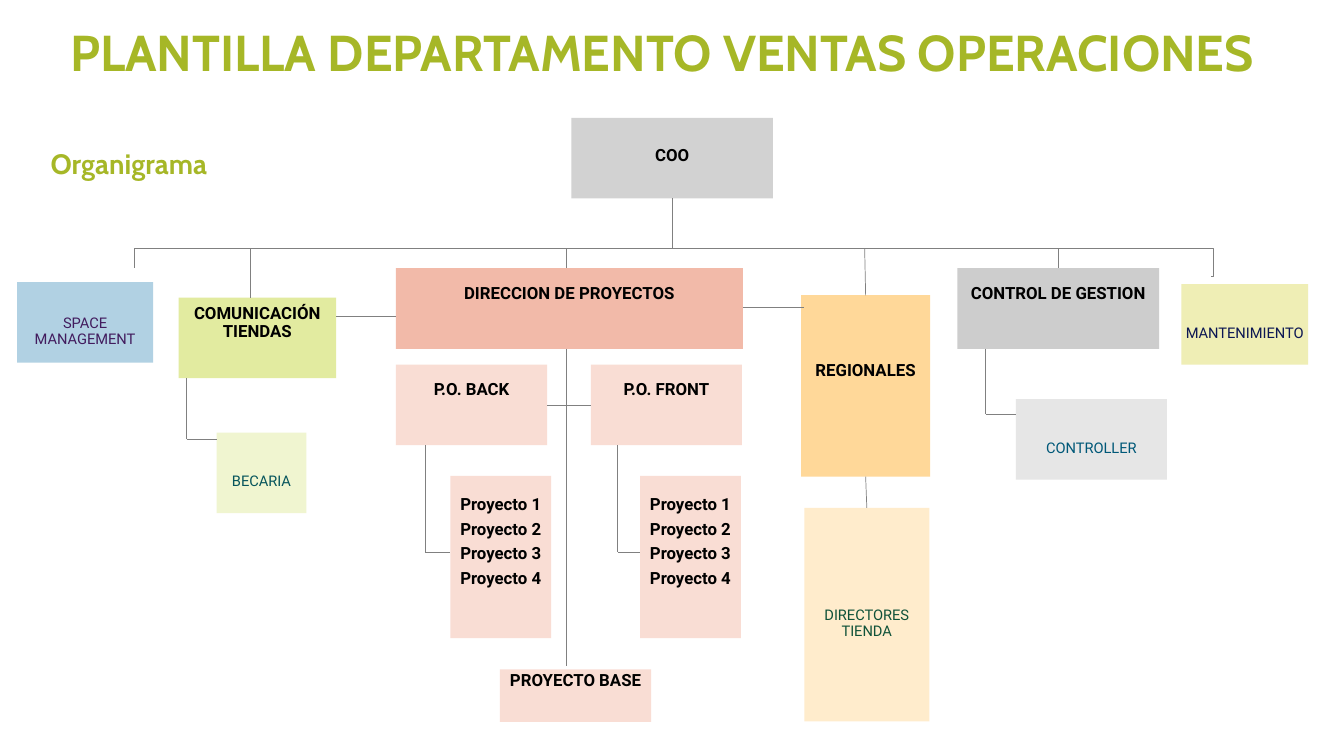
"""Builds the organisation chart slide of the sales operations department."""
from lxml import etree
from pptx import Presentation
from pptx.dml.color import RGBColor
from pptx.enum.shapes import MSO_CONNECTOR, MSO_SHAPE
from pptx.enum.text import MSO_ANCHOR, MSO_AUTO_SIZE, PP_ALIGN
from pptx.oxml.ns import qn
from pptx.util import Cm, Pt

STRAIGHT, ELBOW = MSO_CONNECTOR.STRAIGHT, MSO_CONNECTOR.ELBOW
RECTANGLE = MSO_SHAPE.RECTANGLE
MIDDLE, TOP = MSO_ANCHOR.MIDDLE, MSO_ANCHOR.TOP
CENTER, LEFT = PP_ALIGN.CENTER, PP_ALIGN.LEFT
NO_AUTOFIT = MSO_AUTO_SIZE.NONE

OLIVE = RGBColor(0xA6, 0xB7, 0x27)
BLACK = RGBColor(0x00, 0x00, 0x00)
LINE_GRAY = RGBColor(0x80, 0x80, 0x80)
COO_GRAY = RGBColor(0xD2, 0xD2, 0xD2)
CONTROL_GRAY = RGBColor(0xCD, 0xCD, 0xCD)
CONTROLLER_GRAY = RGBColor(0xE6, 0xE6, 0xE6)
BLUE = RGBColor(0xB1, 0xD1, 0xE3)
LIME = RGBColor(0xE2, 0xEB, 0xA0)
PALE_LIME = RGBColor(0xF0, 0xF5, 0xD0)
SALMON = RGBColor(0xF2, 0xBA, 0xA9)
PALE_SALMON = RGBColor(0xF9, 0xDD, 0xD4)
ORANGE = RGBColor(0xFF, 0xD8, 0x99)
PALE_ORANGE = RGBColor(0xFF, 0xEC, 0xCC)
YELLOW = RGBColor(0xEF, 0xEE, 0xB5)
PURPLE = RGBColor(0x42, 0x1C, 0x5E)
TEAL = RGBColor(0x07, 0x55, 0x5C)
GREEN = RGBColor(0x10, 0x52, 0x39)
PETROL = RGBColor(0x00, 0x58, 0x78)
NAVY = RGBColor(0x0C, 0x17, 0x53)

BOX_HEIGHT = 2.03
BUS_Y = 6.25
TRUNK_X = 14.27

prs = Presentation()
prs.slide_width, prs.slide_height = Cm(33.87), Cm(19.05)
slide = prs.slides.add_slide(prs.slide_layouts[1])


def add_unit(text, left, top, width, height, fill, color=BLACK):
    """Add a box; black text is a bold heading, coloured text a light label."""
    heading = color == BLACK
    unit = slide.shapes.add_shape(RECTANGLE, Cm(left), Cm(top), Cm(width), Cm(height))
    unit.shadow.inherit = False
    unit.fill.solid()
    unit.fill.fore_color.rgb = fill
    unit.line.fill.background()
    frame = unit.text_frame
    frame.word_wrap = True
    frame.vertical_anchor = MIDDLE
    frame.margin_left = frame.margin_right = Cm(0.03)
    frame.margin_top = Cm(0.03 if heading else 0.5)
    frame.margin_bottom = Cm(0.78 if heading else 0.03)
    frame.text = text
    for paragraph in frame.paragraphs:
        paragraph.alignment = CENTER
        paragraph.line_spacing = 0.9
        paragraph.space_after = Pt(4.5)
        font = paragraph.runs[0].font
        font.name = "Roboto"
        font.size = Pt(12 if heading else 10.5)
        font.bold = heading
        font.color.rgb = color
    return unit


def add_link(x1, y1, x2, y2, kind=STRAIGHT):
    """Add a thin gray connector between two points."""
    link = slide.shapes.add_connector(kind, Cm(x1), Cm(y1), Cm(x2), Cm(y2))
    link.line.color.rgb = LINE_GRAY
    link.line.width = Pt(0.5)
    etree.SubElement(link._element.spPr, qn("a:effectLst"))
    return link


title = slide.shapes.title
subtitle = slide.placeholders[1]
headings = [
    (title, "PLANTILLA DEPARTAMENTO VENTAS OPERACIONES",
     (0.43, 0.2, 32.51, 2.36), 36, 0.9, CENTER, MIDDLE),
    (subtitle, "Organigrama", (1.02, 3.73, 9.96, 1.02), 20, 0.8, LEFT, TOP),
]
for holder, text, place, size, spacing, alignment, anchor in headings:
    holder.left, holder.top, holder.width, holder.height = map(Cm, place)
    frame = holder.text_frame
    frame.text = text
    frame.auto_size = NO_AUTOFIT
    frame.vertical_anchor = anchor
    paragraph = frame.paragraphs[0]
    properties = paragraph._p.get_or_add_pPr()
    properties.set("marL", "0")
    properties.set("indent", "0")
    etree.SubElement(properties, qn("a:buNone"))
    paragraph.alignment = alignment
    paragraph.line_spacing = spacing
    paragraph.space_before = Pt(0)
    font = paragraph.runs[0].font
    font.name = "Cabin"
    font.size = Pt(size)
    font.bold = True
    font.color.rgb = OLIVE

coo = add_unit("COO", 14.4, 2.97, 5.08, BOX_HEIGHT, COO_GRAY)
coo.text_frame.margin_bottom = Cm(0.15)
add_unit("SPACE MANAGEMENT", 0.43, 7.11, 3.43, BOX_HEIGHT, BLUE, PURPLE)
add_unit("COMUNICACIÓN TIENDAS", 4.5, 7.5, 3.97, BOX_HEIGHT, LIME)
add_unit("BECARIA", 5.46, 10.9, 2.26, BOX_HEIGHT, PALE_LIME, TEAL)
add_unit("DIRECCION DE PROYECTOS", 9.98, 6.76, 8.74, BOX_HEIGHT, SALMON)
po_back = add_unit("P.O. BACK", 9.98, 9.19, 3.81, BOX_HEIGHT, PALE_SALMON)
po_front = add_unit("P.O. FRONT", 14.89, 9.19, 3.81, BOX_HEIGHT, PALE_SALMON)
regionales = add_unit("REGIONALES", 20.19, 7.44, 3.25, 4.57, ORANGE)
directores = add_unit("DIRECTORES TIENDA", 20.27, 12.8, 3.15, 5.38, PALE_ORANGE, GREEN)
control = add_unit("CONTROL DE GESTION", 24.13, 6.76, 5.08, BOX_HEIGHT, CONTROL_GRAY)
add_unit("CONTROLLER", 25.6, 10.06, 3.81, BOX_HEIGHT, CONTROLLER_GRAY, PETROL)
add_unit("MANTENIMIENTO", 29.77, 7.16, 3.2, BOX_HEIGHT, YELLOW, NAVY)
projects = "\n".join(f"Proyecto {number}" for number in range(1, 5))
for left in (11.35, 16.13):
    add_unit(projects, left, 11.99, 2.54, 4.09, PALE_SALMON)
add_unit("PROYECTO BASE", 12.6, 16.87, 3.81, 1.32, PALE_SALMON)

for end_x, end_y, bend in ((3.4, 6.76, 100000), (30.53, 6.96, 100300)):
    bus = add_link(16.94, BUS_Y, end_x, end_y, ELBOW)
    adjustments = bus._element.spPr.find(qn("a:prstGeom")).find(qn("a:avLst"))
    etree.SubElement(adjustments, qn("a:gd"), name="adj1", fmla=f"val {bend}")

add_link(16.94, BUS_Y, 16.94, 5).end_connect(coo, 2)
add_link(21.79, BUS_Y, 21.82, 7.44).end_connect(regionales, 0)
add_link(26.67, BUS_Y, 26.67, 6.76).end_connect(control, 0)
for upper, upper_side, lower, lower_side in (
    (regionales, 2, directores, 0),
    (po_back, 3, po_front, 1),
):
    link = add_link(0, 0, 1, 1)
    link.begin_connect(upper, upper_side)
    link.end_connect(lower, lower_side)

for x1, y1, x2, y2 in (
    (6.32, BUS_Y, 6.32, 7.5),
    (TRUNK_X, BUS_Y, TRUNK_X, 6.76),
    (TRUNK_X, 8.79, TRUNK_X, 16.79),
    (8.47, 7.98, 9.98, 7.98),
    (18.72, 7.75, 20.27, 7.75),
):
    add_link(x1, y1, x2, y2)

for stem_x, stem_top, branch_y, branch_end in (
    (4.7, 9.53, 11.07, 5.46),
    (24.84, 8.79, 10.44, 25.6),
    (10.72, 11.22, 13.92, 11.35),
    (15.57, 11.22, 13.92, 16.13),
):
    add_link(stem_x, stem_top, stem_x, branch_y)
    add_link(stem_x, branch_y, branch_end, branch_y)

prs.save("out.pptx")
